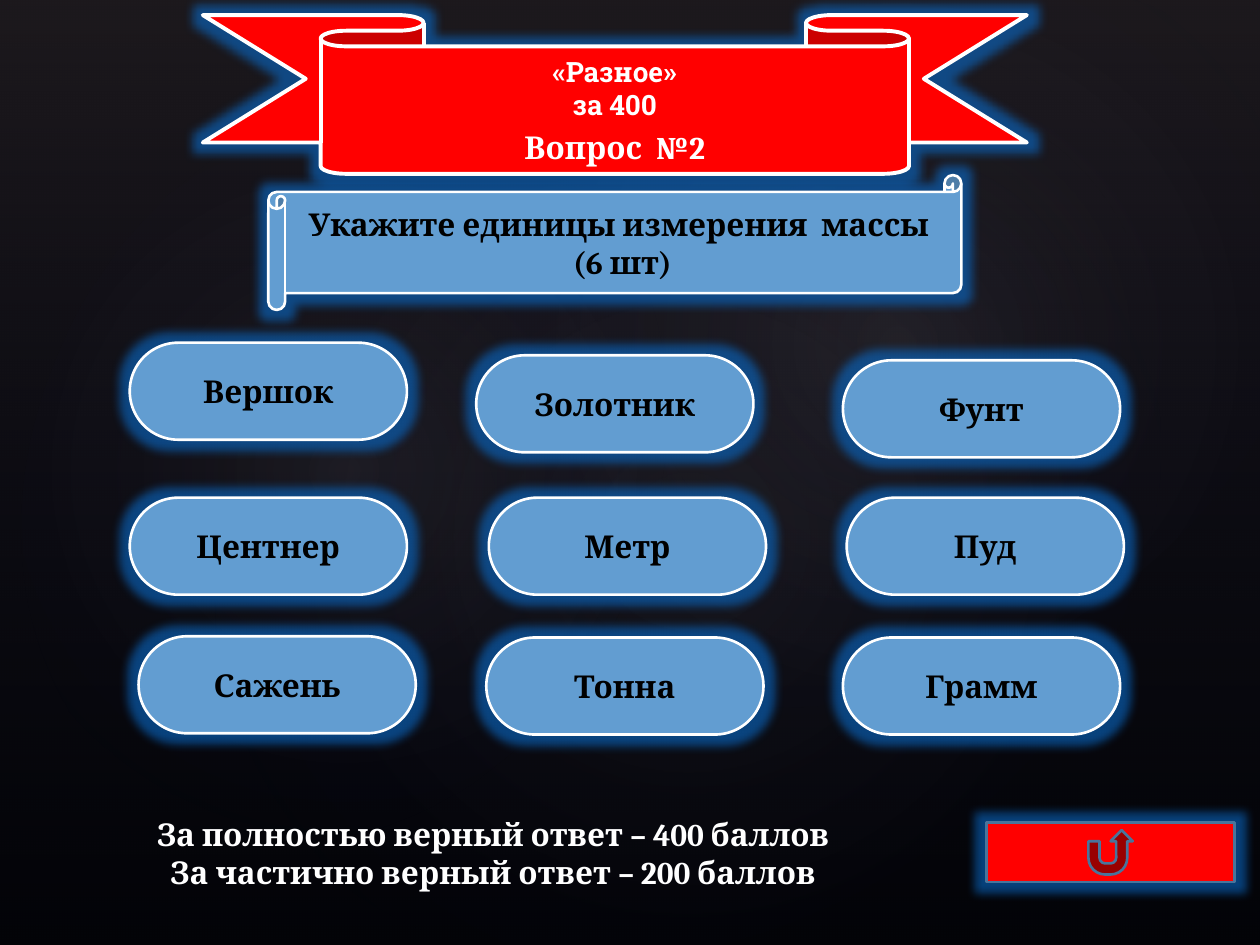
from lxml.etree import SubElement
from pptx import Presentation
from pptx.dml.color import RGBColor
from pptx.enum.shapes import MSO_SHAPE
from pptx.enum.text import MSO_ANCHOR, MSO_AUTO_SIZE, PP_ALIGN
from pptx.oxml import parse_xml
from pptx.oxml.ns import nsdecls, qn
from pptx.util import Inches, Pt

COLORS = {
    "black": "000000", "white": "FFFFFF", "red": "FF0000", "blue": "629DD1",
    "outline": "49749B", "glow": "0A6AC8", "navy": "242852",
    "plum": "504652", "haze": "C4BCC6",
}
HEADING = "Roboto Slab"
BODY = "Cambria"

# Lines of text: (text, font, size, space before in points)
BANNER = [("«Разное»", HEADING, 16, 0), ("за 400", HEADING, 16, 0),
          ("Вопрос  №2", BODY, 18, 4)]
QUESTION = [("Укажите единицы измерения  массы", BODY, 18, 0),
            (" (6 шт)", BODY, 18, 0)]
SCORING = [("За полностью верный ответ – 400 баллов", BODY, 18, 0),
           ("За частично верный ответ – 200 баллов", BODY, 18, 0)]

# The answers sit slightly off a regular grid: (word, left, top)
ANSWER_SIZE = (2.2, 0.77)
ANSWERS = [
    ("Вершок", 1.03, 2.72), ("Золотник", 3.78, 2.82), ("Фунт", 6.69, 2.86),
    ("Центнер", 1.03, 3.95), ("Метр", 3.88, 3.95), ("Пуд", 6.72, 3.95),
    ("Сажень", 1.1, 5.05), ("Тонна", 3.86, 5.06), ("Грамм", 6.69, 5.06),
]

# Soft light spots: (box, rotation, opacity in percent)
SPOTS = [
    ((1.5, 1.14, 7.92, 6.24), 328.7, 7),
    ((-0.3, 1.28, 6.06, 4.9), 294.3, 8),
    ((3.58, 0.13, 7.09, 5.2), 328.7, 8),
]
LINEAR = '<a:lin ang="5400000" scaled="0"/>'
RADIAL = ('<a:path path="circle"><a:fillToRect l="50000" t="50000" '
          'r="50000" b="50000"/></a:path>')


def rgb(name):
    return RGBColor.from_string(COLORS[name])


def add_shape(slide, kind, box):
    shape = slide.shapes.add_shape(kind, *map(Inches, box))
    shape.shadow.inherit = False
    return shape


def add_backdrop(slide, kind, box, stops, direction, rotation=0):
    """Add a borderless shape with a translucent gradient.

    Each stop is (position, colour name, opacity), in percent.
    """
    shape = add_shape(slide, kind, box)
    shape.rotation = rotation
    shape.line.fill.background()
    shape.fill.background()
    stop_xml = "".join(
        f'<a:gs pos="{position * 1000}"><a:srgbClr val="{COLORS[color]}">'
        f'<a:alpha val="{opacity * 1000}"/></a:srgbClr></a:gs>'
        for position, color, opacity in stops)
    gradient = parse_xml(f'<a:gradFill {nsdecls("a")} rotWithShape="1">'
                         f'<a:gsLst>{stop_xml}</a:gsLst>{direction}</a:gradFill>')
    properties = shape._element.spPr
    properties.replace(properties.find(qn("a:noFill")), gradient)


def add_glowing_shape(slide, kind, box, fill, line, width):
    shape = add_shape(slide, kind, box)
    shape.fill.solid()
    shape.fill.fore_color.rgb = rgb(fill)
    shape.line.color.rgb = rgb(line)
    shape.line.width = Pt(width)
    effects = shape._element.spPr.find(qn("a:effectLst"))
    glow = SubElement(effects, qn("a:glow"), rad=str(Pt(11)))
    color = SubElement(glow, qn("a:srgbClr"), val=COLORS["glow"])
    SubElement(color, qn("a:alpha"), val="60000")
    return shape


def write_lines(shape, lines, color):
    frame = shape.text_frame
    frame.word_wrap = True
    for index, (text, font, size, space_before) in enumerate(lines):
        paragraph = frame.add_paragraph() if index else frame.paragraphs[0]
        paragraph.alignment = PP_ALIGN.CENTER
        paragraph.space_before = Pt(space_before)
        run = paragraph.add_run()
        run.text = text
        run.font.name = font
        run.font.size = Pt(size)
        run.font.bold = True
        run.font.color.rgb = rgb(color)


def main():
    presentation = Presentation()
    presentation.slide_width = Inches(10)
    presentation.slide_height = Inches(7.5)
    slide = presentation.slides.add_slide(presentation.slide_layouts[6])
    slide.background.fill.solid()
    slide.background.fill.fore_color.rgb = rgb("black")

    add_backdrop(slide, MSO_SHAPE.RECTANGLE, (0, 0, 10, 7.5),
                 [(0, "plum", 36), (100, "navy", 10)], LINEAR)
    for box, rotation, opacity in SPOTS:
        add_backdrop(slide, MSO_SHAPE.OVAL, box,
                     [(0, "haze", opacity), (58, "navy", 0)], RADIAL, rotation)

    banner = add_glowing_shape(slide, MSO_SHAPE.DOWN_RIBBON,
                               (1.61, 0.12, 6.54, 1.26), "red", "white", 2.25)
    banner.adjustments[0] = 0.197
    banner.adjustments[1] = 0.714
    banner.text_frame.vertical_anchor = MSO_ANCHOR.MIDDLE
    write_lines(banner, BANNER, "white")

    add_glowing_shape(slide, MSO_SHAPE.ACTION_BUTTON_RETURN,
                      (7.83, 6.53, 1.97, 0.47), "red", "outline", 1.5)

    question = add_glowing_shape(slide, MSO_SHAPE.HORIZONTAL_SCROLL,
                                 (2.13, 1.39, 5.5, 1.07), "blue", "white", 1.5)
    question.text_frame.vertical_anchor = MSO_ANCHOR.MIDDLE
    write_lines(question, QUESTION, "black")

    for word, left, top in ANSWERS:
        answer = add_glowing_shape(slide, MSO_SHAPE.ROUNDED_RECTANGLE,
                                   (left, top, *ANSWER_SIZE), "blue", "white", 1.5)
        answer.adjustments[0] = 0.5
        answer.text_frame.vertical_anchor = MSO_ANCHOR.MIDDLE
        write_lines(answer, [(word, BODY, 18, 0)], "black")

    scoring = slide.shapes.add_textbox(*map(Inches, (1.03, 6.42, 5.77, 0.71)))
    scoring.text_frame.auto_size = MSO_AUTO_SIZE.SHAPE_TO_FIT_TEXT
    write_lines(scoring, SCORING, "white")

    presentation.save("out.pptx")


if __name__ == "__main__":
    main()
